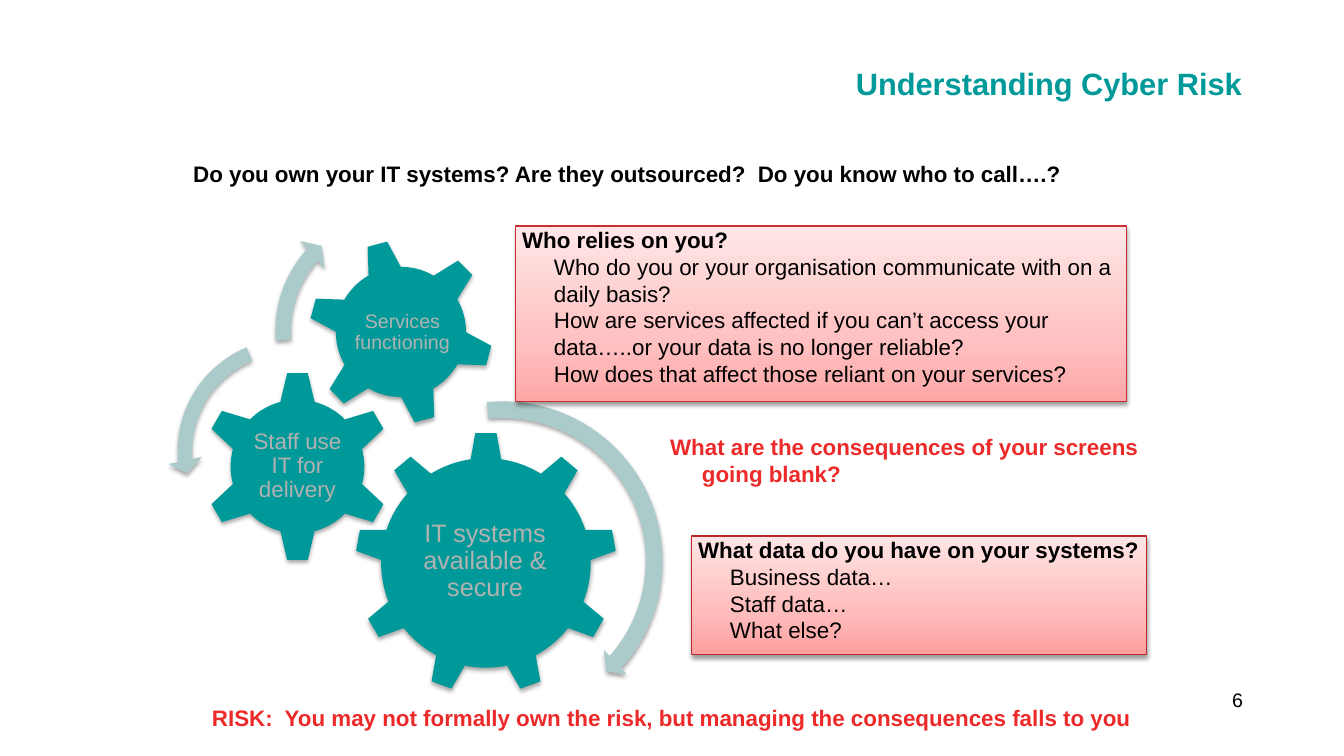
from copy import deepcopy
from lxml.etree import SubElement
from pptx import Presentation
from pptx.dml.color import RGBColor
from pptx.enum.shapes import MSO_SHAPE
from pptx.enum.text import MSO_ANCHOR, PP_ALIGN
from pptx.oxml.ns import qn
from pptx.util import Pt

PX = 914400 / 100.8
FONT = "Arial"
HANG = 38
COLOURS = {
    "teal": "009999", "mist": "ABCACA", "grey": "B2B2B2",
    "black": "000000", "red": "ED2A2A",
    "brick": "B82929", "rust": "CB2E2E",
}
BLUSH = [(0, "FF9F9F"), (0.35, "FFBBBB"), (1, "FFE5E5")]
ROSE = [(0, "FFA7A7"), (0.35, "FFC1C1"), (1, "FFE7E7")]

# kind, place, turn, label, label place, size, inset
GEARS = [
    (MSO_SHAPE.GEAR_9, (355, 432, 262, 262), 0,
     "IT systems available & secure", (407, 494, 156, 135), 18, 3),
    (MSO_SHAPE.GEAR_6, (202, 371, 191, 191), 0,
     "Staff use IT for delivery", (250, 419, 95, 94), 16, 2),
    (MSO_SHAPE.GEAR_6, (308, 239, 186, 186), 345,
     "Services functioning", (350, 280, 105, 105), 14, 2),
]
# kind, place, adjustments
ARCS = [
    (MSO_SHAPE.CIRCULAR_ARROW, (335, 393, 336, 336),
     (0.05, 2.99, 25.19, 158.55, 0.05)),
    (MSO_SHAPE.LEFT_CIRCULAR_ARROW, (168, 329, 244, 244),
     (0.06, 4.3, 104.89, 148.38, 0.07)),
    (MSO_SHAPE.CIRCULAR_ARROW, (265, 199, 263, 263),
     (0.06, 3.94, 133.14, 105.08, 0.07)),
]
# place, gradient, edge, heading, points
PANELS = [
    ((692, 536, 455, 119), BLUSH, "brick",
     " What data do you have on your systems?",
     ["Business data…", "Staff data…", "What else?"]),
    ((516, 226, 611, 176), ROSE, "rust",
     " Who relies on you?",
     ["Who do you or your organisation communicate with on a daily basis?",
      "How are services affected if you can’t access your data…..or your "
      "data is no longer reliable?",
      "How does that affect those reliant on your services?"]),
]
# text, place, size, colour, bold, alignment, hanging indent
NOTES = [
    ("Understanding Cyber Risk", (392, 65, 850, 104),
     22, "teal", True, PP_ALIGN.RIGHT, 0),
    ("6", (964, 688, 279, 50), 14, "black", False, PP_ALIGN.RIGHT, 0),
    (" Do you own your IT systems? Are they outsourced?  "
     "Do you know who to call….?", (187, 160, 889, 64),
     16, "black", True, PP_ALIGN.LEFT, HANG),
    (" What are the consequences of your screens going blank?",
     (664, 433, 512, 93), 16, "red", True, PP_ALIGN.LEFT, HANG),
    (" RISK:  You may not formally own the risk, but managing the "
     "consequences falls to you", (172, 704, 993, 44),
     16, "red", True, PP_ALIGN.CENTER, HANG),
]

deck = Presentation()
deck.slide_width, deck.slide_height = round(1344 * PX), round(756 * PX)
slide = deck.slides.add_slide(deck.slide_layouts[6])


def emu(place):
    return [round(n * PX) for n in place]


def rgb(name):
    return RGBColor.from_string(COLOURS[name])


def shade(shape, drop, alpha):
    """Cast a soft shadow straight down; call once fill and line are set."""
    shape.shadow.inherit = False
    effects = shape._element.spPr.find(qn("a:effectLst"))
    outer = SubElement(effects, qn("a:outerShdw"), blurRad="40000",
                       dist=str(drop), dir="5400000", rotWithShape="0")
    tint = SubElement(outer, qn("a:srgbClr"), val=COLOURS["black"])
    SubElement(tint, qn("a:alpha"), val=str(alpha * 1000))


def solid(kind, place, colour):
    shape = slide.shapes.add_shape(kind, *emu(place))
    shape.fill.solid()
    shape.fill.fore_color.rgb = rgb(colour)
    shape.line.fill.background()
    shade(shape, 23000, 35)
    return shape


def blend(shape, stops):
    """Fill with stops running from the bottom edge to the top."""
    shape.fill.gradient()
    shape.fill.gradient_angle = 90
    marks = shape._element.spPr.find(qn("a:gradFill")).find(qn("a:gsLst"))
    marks.append(deepcopy(marks[0]))
    for mark, (spot, tone) in zip(shape.fill.gradient_stops, stops):
        mark.position = spot
        mark.color.rgb = RGBColor.from_string(tone)


def frame(shape, inset=0):
    box = shape.text_frame
    box.word_wrap = True
    box.margin_left = box.margin_right = round(inset * PX)
    box.margin_top = box.margin_bottom = round(inset * PX)
    return box


def style(para, size, colour, bold=False, align=PP_ALIGN.LEFT,
          left=0, first=0):
    para.alignment = align
    props = para._p.get_or_add_pPr()
    props.set("marL", str(round(left * PX)))
    props.set("indent", str(round(first * PX)))
    for run in para.runs:
        font = run.font
        font.name, font.size, font.bold = FONT, Pt(size), bold
        font.color.rgb = rgb(colour)


for kind, place, turn, label, spot, size, inset in GEARS:
    solid(kind, place, "teal").rotation = turn
    box = frame(slide.shapes.add_textbox(*emu(spot)), inset)
    box.vertical_anchor = MSO_ANCHOR.MIDDLE
    box.text = label
    box.paragraphs[0].line_spacing = 0.9
    style(box.paragraphs[0], size, "grey", align=PP_ALIGN.CENTER)

for kind, place, bends in ARCS:
    arc = solid(kind, place, "mist")
    for i, bend in enumerate(bends):
        arc.adjustments[i] = bend

for place, stops, edge, heading, points in PANELS:
    panel = slide.shapes.add_shape(MSO_SHAPE.RECTANGLE, *emu(place))
    blend(panel, stops)
    panel.line.color.rgb = rgb(edge)
    panel.line.width = Pt(0.75)
    shade(panel, 20000, 38)
    box = frame(panel)
    box.vertical_anchor = MSO_ANCHOR.TOP
    box.text = "\n".join([heading, *points])
    head, *rest = box.paragraphs
    style(head, 16, "black", True, left=HANG, first=-HANG)
    for para in rest:
        style(para, 16, "black", left=HANG)

for text, place, size, colour, bold, align, hang in NOTES:
    box = frame(slide.shapes.add_textbox(*emu(place)))
    box.text = text
    style(box.paragraphs[0], size, colour, bold, align, hang, -hang)

deck.save("out.pptx")
